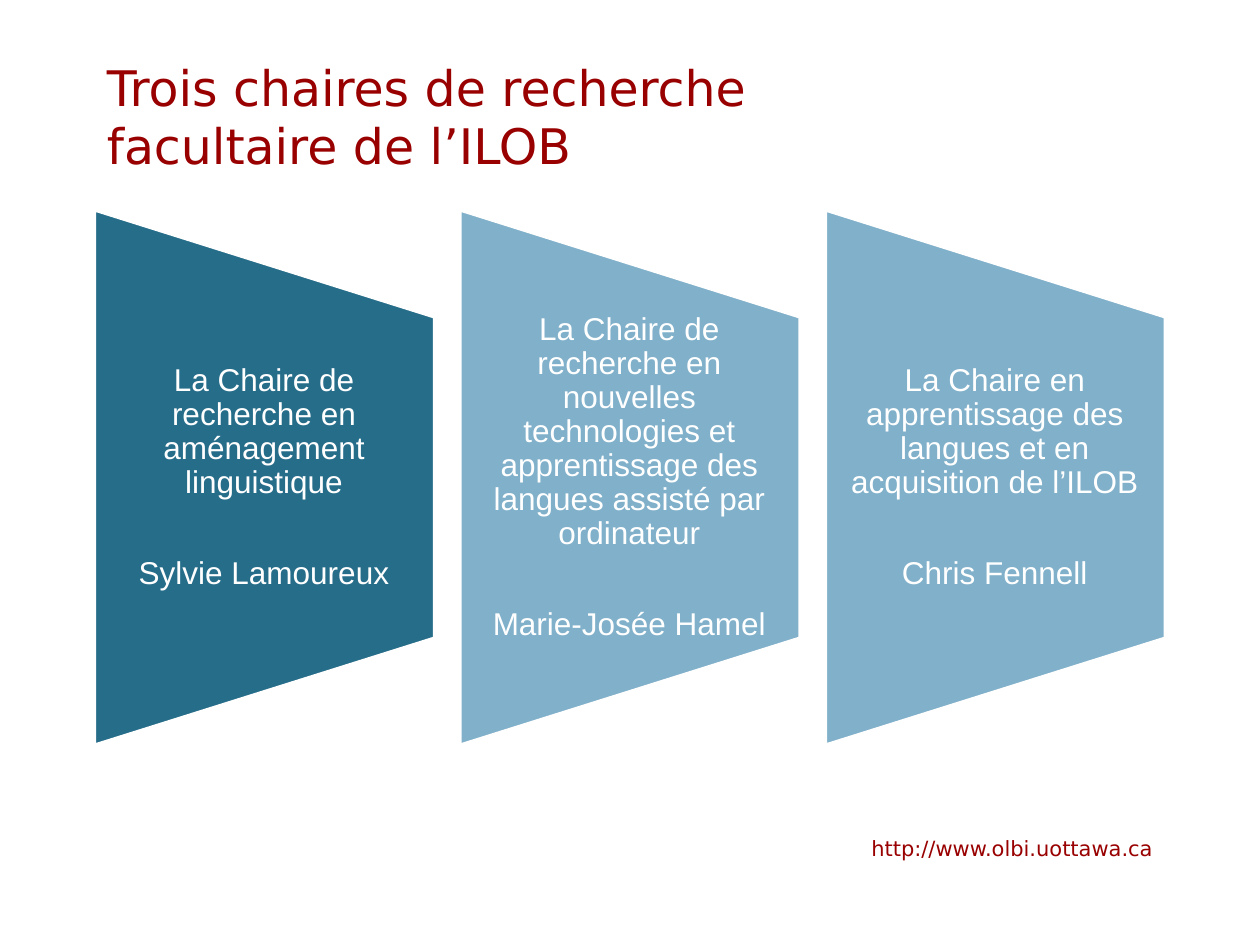
from pptx import Presentation
from pptx.dml.color import RGBColor
from pptx.enum.shapes import MSO_SHAPE
from pptx.enum.text import MSO_ANCHOR, PP_ALIGN
from pptx.util import Inches, Pt

RED = RGBColor(0x99, 0x00, 0x00)
TEAL = RGBColor(0x26, 0x6D, 0x8A)
LIGHT_BLUE = RGBColor(0x80, 0xB0, 0xCA)
WHITE = RGBColor(0xFF, 0xFF, 0xFF)

PANEL_LEFT, PANEL_STEP = 0.75, 2.9
PANEL_WIDTH, PANEL_HEIGHT = 2.7, 4.25
PANEL_MIDDLE = 3.79
TEXT_HEIGHT = 2.55

CHAIRS = [
    ("La Chaire de recherche en aménagement linguistique",
     "Sylvie Lamoureux", TEAL),
    ("La Chaire de recherche en nouvelles technologies et apprentissage "
     "des langues assisté par ordinateur", "Marie-Josée Hamel", LIGHT_BLUE),
    ("La Chaire en apprentissage des langues et en acquisition de l’ILOB",
     "Chris Fennell", LIGHT_BLUE),
]


def add_text(slide, left, top, width, height, lines, size, font, color,
             alignment=PP_ALIGN.LEFT, anchor=MSO_ANCHOR.TOP):
    box = slide.shapes.add_textbox(
        Inches(left), Inches(top), Inches(width), Inches(height))
    text_frame = box.text_frame
    text_frame.word_wrap = True
    text_frame.vertical_anchor = anchor
    text_frame.text = "\n".join(lines)
    for paragraph in text_frame.paragraphs:
        paragraph.alignment = alignment
        for run in paragraph.runs:
            run.font.size = Pt(size)
            run.font.name = font
            run.font.color.rgb = color
    return text_frame


def add_panel(slide, left, color):
    """Add a trapezoid turned on its side, its wide edge at the left."""
    shape = slide.shapes.add_shape(
        MSO_SHAPE.FLOWCHART_MANUAL_OPERATION,
        Inches(left + (PANEL_WIDTH - PANEL_HEIGHT) / 2),
        Inches(PANEL_MIDDLE - PANEL_WIDTH / 2),
        Inches(PANEL_HEIGHT), Inches(PANEL_WIDTH))
    shape.rotation = 270
    shape.shadow.inherit = False
    shape.fill.solid()
    shape.fill.fore_color.rgb = color
    shape.line.color.rgb = WHITE
    shape.line.width = Pt(2)


def add_chair(slide, left, chair, holder, color):
    add_panel(slide, left, color)
    text_frame = add_text(
        slide, left, PANEL_MIDDLE - TEXT_HEIGHT / 2, PANEL_WIDTH, TEXT_HEIGHT,
        [chair, holder], 18, "Arial", WHITE,
        PP_ALIGN.CENTER, MSO_ANCHOR.MIDDLE)
    text_frame.margin_left = Inches(0.12)
    text_frame.margin_right = Inches(0.13)
    text_frame.margin_top = text_frame.margin_bottom = 0
    for paragraph in text_frame.paragraphs:
        paragraph.line_spacing = 0.9
    text_frame.paragraphs[0].space_after = Pt(32.5)


def main():
    presentation = Presentation()
    presentation.slide_width = Inches(10)
    presentation.slide_height = Inches(7.5)
    slide = presentation.slides.add_slide(presentation.slide_layouts[6])

    add_text(slide, 0.75, 0.42, 7.17, 1,
             ["Trois chaires de recherche facultaire de l’ILOB"],
             28, "DejaVu Sans", RED, anchor=MSO_ANCHOR.MIDDLE)
    for index, (chair, holder, color) in enumerate(CHAIRS):
        add_chair(slide, PANEL_LEFT + index * PANEL_STEP, chair, holder, color)
    add_text(slide, 4.25, 6.58, 5, 0.5, ["http://www.olbi.uottawa.ca"],
             12, "DejaVu Sans", RED, PP_ALIGN.RIGHT)

    presentation.save("out.pptx")


if __name__ == "__main__":
    main()
